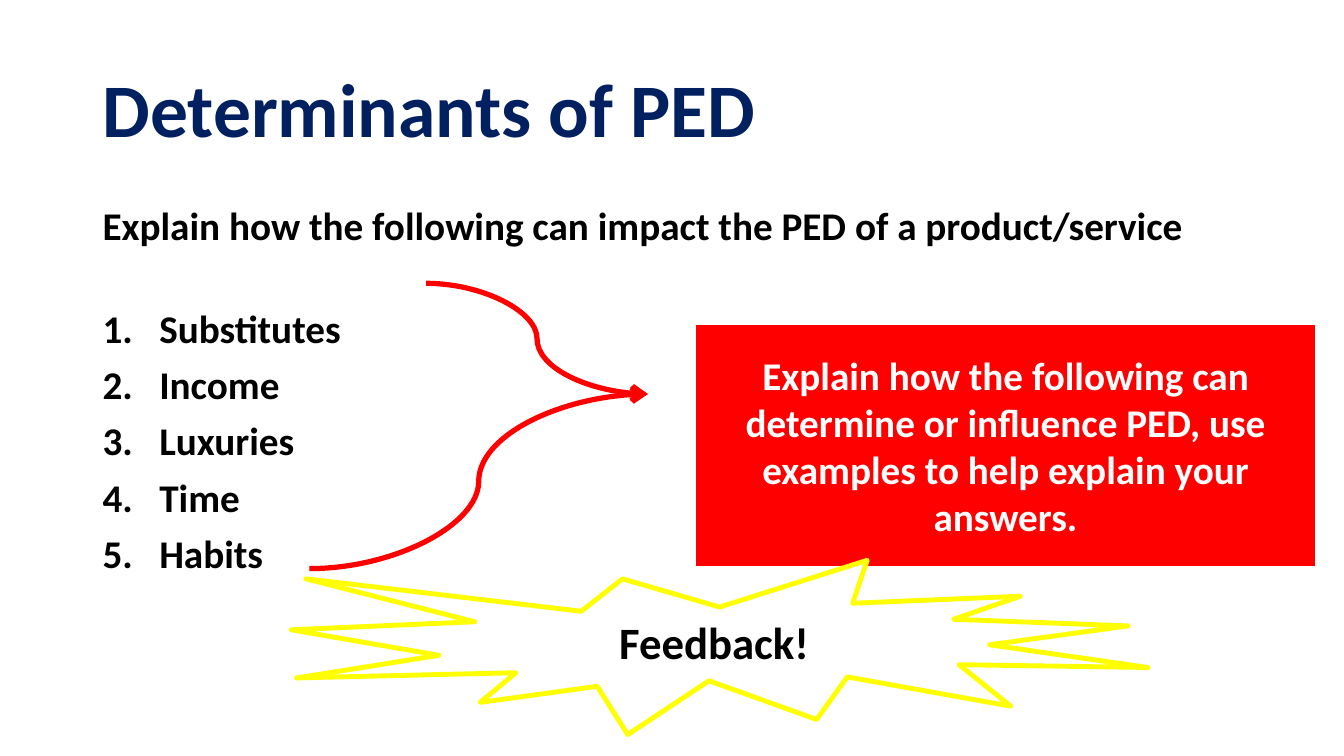
from dataclasses import dataclass

from lxml import etree
from pptx import Presentation
from pptx import util as u
from pptx.dml import color
from pptx.enum import shapes, text
from pptx.oxml import ns


@dataclass(frozen=True)
class Theme:
    font: str = "Calibri"
    navy: str = "002060"
    black: str = "000000"
    white: str = "FFFFFF"
    red: str = "FF0000"
    yellow: str = "FFFF00"
    title: int = 54
    body: int = 28
    callout: int = 32
    outline: float = 3.5
    arrow: float = 3.75


T = Theme()


def rgb(value):
    return color.RGBColor.from_string(value)


def place(sp, *box):
    sp.left, sp.top, sp.width, sp.height = (u.Cm(v) for v in box)


def write(p, words, size=T.body, ink=T.black, align=text.PP_ALIGN.LEFT,
          line=None, before=0, after=0):
    p.alignment = align
    p.line_spacing = line
    p.space_before, p.space_after = u.Pt(before), u.Pt(after)
    r = p.add_run()
    r.text = words
    r.font.name, r.font.size, r.font.bold = T.font, u.Pt(size), True
    r.font.color.rgb = rgb(ink)


def set_bullet(p, numbered):
    pPr = p._p.get_or_add_pPr()
    pPr.set("marL", str(u.Cm(1.43)))
    pPr.set("indent", str(u.Cm(-1.43)))
    if numbered:
        etree.SubElement(pPr, ns.qn("a:buFont"), typeface="+mj-lt")
        etree.SubElement(pPr, ns.qn("a:buAutoNum"), type="arabicPeriod")
    else:
        etree.SubElement(pPr, ns.qn("a:buNone"))


def add_title(s, words):
    sp = s.shapes.title
    place(sp, 2.33, 1.02, 29.21, 3.68)
    tf = sp.text_frame
    tf.auto_size = text.MSO_AUTO_SIZE.NONE
    tf.vertical_anchor = text.MSO_ANCHOR.MIDDLE
    write(tf.paragraphs[0], words, size=T.title, ink=T.navy, line=0.9)


def add_numbered_list(s, prompt, items):
    sp = s.placeholders[1]
    place(sp, 2.33, 5.08, 29.21, 12.09)
    tf = sp.text_frame
    tf.auto_size = text.MSO_AUTO_SIZE.NONE
    p = tf.paragraphs[0]
    write(p, prompt, line=0.9, before=10, after=33)
    set_bullet(p, numbered=False)
    for item in items:
        p = tf.add_paragraph()
        write(p, item, line=0.9, before=10)
        set_bullet(p, numbered=True)


def add_curved_arrow(s, start, end):
    c = s.shapes.add_connector(shapes.MSO_CONNECTOR.CURVE,
                               *(u.Cm(v) for v in start + end))
    c.line.color.rgb, c.line.width = rgb(T.red), u.Pt(T.arrow)
    etree.SubElement(c.line._get_or_add_ln(), ns.qn("a:tailEnd"), type="arrow")
    etree.SubElement(c._element.spPr, ns.qn("a:effectLst"))


def add_box(s, kind, box, words, fill, line, **fmt):
    sp = s.shapes.add_shape(kind, *(u.Cm(v) for v in box))
    sp.shadow.inherit = False
    sp.fill.solid()
    sp.fill.fore_color.rgb = rgb(fill)
    sp.line.color.rgb, sp.line.width = rgb(line), u.Pt(T.outline)
    tf = sp.text_frame
    tf.word_wrap = True
    tf.vertical_anchor = text.MSO_ANCHOR.MIDDLE
    write(tf.paragraphs[0], words, align=text.PP_ALIGN.CENTER, **fmt)


def main():
    prs = Presentation()
    prs.slide_width, prs.slide_height = u.Cm(33.87), u.Cm(19.05)
    s = prs.slides.add_slide(prs.slide_layouts[1])

    add_title(s, "Determinants of PED")
    add_numbered_list(
        s, "Explain how the following can impact the PED of a product/service",
        ["Substitutes", "Income", "Luxuries", "Time", "Habits"])

    tip = (16.33, 9.93)
    for start in ((10.74, 7.14), (7.8, 14.33)):
        add_curved_arrow(s, start, tip)

    add_box(s, shapes.MSO_SHAPE.RECTANGLE, (17.48, 8.13, 15.72, 6.2),
            "Explain how the following can determine or influence PED, "
            "use examples to help explain your answers.",
            fill=T.red, line=T.white, ink=T.white)
    add_box(s, shapes.MSO_SHAPE.EXPLOSION1, (7.34, 14.12, 21.59, 4.39),
            "Feedback!", fill=T.white, line=T.yellow, size=T.callout)
    prs.save("out.pptx")


if __name__ == "__main__":
    main()
